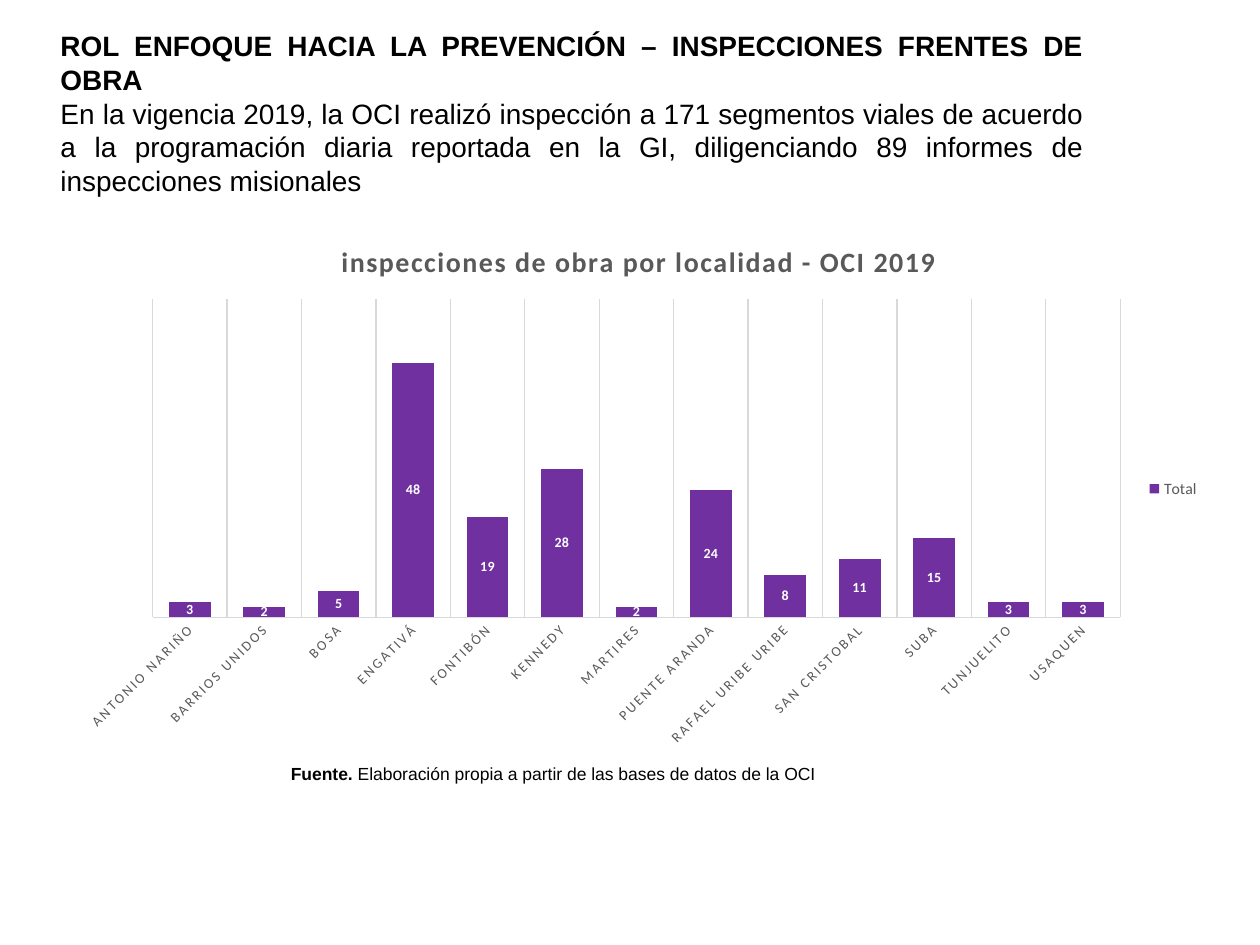
from lxml import etree
from pptx import Presentation
from pptx.chart.data import CategoryChartData
from pptx.dml.color import RGBColor
from pptx.enum.chart import XL_CHART_TYPE, XL_LABEL_POSITION, XL_LEGEND_POSITION, XL_TICK_MARK
from pptx.enum.text import MSO_ANCHOR, MSO_AUTO_SIZE, PP_ALIGN
from pptx.util import Inches, Pt

STACKED = XL_CHART_TYPE.COLUMN_STACKED
CENTER = XL_LABEL_POSITION.CENTER
RIGHT = XL_LEGEND_POSITION.RIGHT
NO_TICK = XL_TICK_MARK.NONE
TOP = MSO_ANCHOR.TOP
GROW = MSO_AUTO_SIZE.SHAPE_TO_FIT_TEXT
LEFT, JUSTIFY = PP_ALIGN.LEFT, PP_ALIGN.JUSTIFY

WIDE, HIGH = Inches(10), Inches(7.5)
COLORS = {"ink": "000000", "gray": "595959", "rule": "D9D9D9",
          "bar": "7030A0", "white": "FFFFFF"}
C_NS = "http://schemas.openxmlformats.org/drawingml/2006/chart"

HEAD = "ROL ENFOQUE HACIA LA PREVENCIÓN – INSPECCIONES FRENTES DE OBRA"
INTRO = ("En la vigencia 2019, la OCI realizó inspección a 171 segmentos viales "
         "de acuerdo a la programación diaria reportada en la GI, diligenciando "
         "89 informes de inspecciones misionales")
SOURCE = "Elaboración propia a partir de las bases de datos de la OCI"
TITLE = "inspecciones de obra por localidad - OCI 2019"
VISITS = {
    "ANTONIO NARIÑO": 3, "BARRIOS UNIDOS": 2, "BOSA": 5, "ENGATIVÁ": 48,
    "FONTIBÓN": 19, "KENNEDY": 28, "MARTIRES": 2, "PUENTE ARANDA": 24,
    "RAFAEL URIBE URIBE": 8, "SAN CRISTOBAL": 11, "SUBA": 15,
    "TUNJUELITO": 3, "USAQUEN": 3,
}


def rgb(name):
    return RGBColor.from_string(COLORS[name])


def area(left, top, width, height):
    """Turn inches into a box of slide lengths."""
    return [Inches(n) for n in (left, top, width, height)]


def style(font, size, color, bold=False, face="Calibri"):
    for key, value in {"size": Pt(size), "bold": bold, "name": face}.items():
        setattr(font, key, value)
    font.color.rgb = rgb(color)


def rule(line):
    line.color.rgb = rgb("rule")
    line.width = Pt(0.75)


def write(shape, box, paras, size, align):
    """Fill a shape with paragraphs, each a list of (text, bold) runs."""
    for key, value in zip(("left", "top", "width", "height"), box):
        setattr(shape, key, value)
    frame = shape.text_frame
    for key, value in {"word_wrap": True, "vertical_anchor": TOP,
                       "auto_size": GROW}.items():
        setattr(frame, key, value)
    for i, runs in enumerate(paras):
        para = frame.add_paragraph() if i else frame.paragraphs[0]
        para.alignment = align
        for text, bold in runs:
            run = para.add_run()
            run.text = text
            style(run.font, size, "ink", bold, "Arial")


def place_plot(chart, shares):
    """Fix the inner plot area as shares of the chart's size."""
    plot = chart.element.xpath(".//c:plotArea")[0]
    for old in plot.xpath("./c:layout"):
        plot.remove(old)
    layout = etree.Element(f"{{{C_NS}}}layout")
    manual = etree.SubElement(layout, f"{{{C_NS}}}manualLayout")
    marks = {"layoutTarget": "inner", "xMode": "edge", "yMode": "edge", **shares}
    for tag, value in marks.items():
        etree.SubElement(manual, f"{{{C_NS}}}{tag}").set("val", str(value))
    plot.insert(0, layout)


def set_axes(chart):
    cat, val = chart.category_axis, chart.value_axis
    cat.major_tick_mark = cat.minor_tick_mark = NO_TICK
    cat.has_major_gridlines = True
    rule(cat.major_gridlines.format.line)
    rule(cat.format.line)
    style(cat.tick_labels.font, 8, "gray")
    val.has_major_gridlines = False
    val.minimum_scale, val.maximum_scale = 0, 60
    val.visible = False
    chart.element.xpath(".//c:catAx/c:txPr/a:bodyPr")[0].set("rot", "-2700000")


def set_bars(chart):
    plot = chart.plots[0]
    plot.gap_width, plot.overlap = 79, 100
    plot.vary_by_categories = False
    bars = plot.series[0]
    bars.format.fill.solid()
    bars.format.fill.fore_color.rgb = rgb("bar")
    labels = bars.data_labels
    labels.show_value = True
    labels.position = CENTER
    style(labels.font, 8, "white", True)


def add_bars(slide, box):
    data = CategoryChartData()
    data.categories = list(VISITS)
    data.add_series("Total", list(VISITS.values()))
    chart = slide.shapes.add_chart(STACKED, *box, data).chart
    style(chart.font, 10, "ink")
    chart.has_title = True
    run = chart.chart_title.text_frame.paragraphs[0].add_run()
    run.text = TITLE
    style(run.font, 16, "gray", True)
    chart.has_legend = True
    chart.legend.position = RIGHT
    chart.legend.include_in_layout = False
    style(chart.legend.font, 9, "gray")
    set_axes(chart)
    set_bars(chart)
    place_plot(chart, {"x": 0.076, "y": 0.146, "w": 0.844, "h": 0.594})
    for path, gap in ((".//c:title//a:rPr", 100), (".//c:catAx//a:defRPr", 120)):
        for props in chart.element.xpath(path):
            props.set("spc", str(gap))


def main():
    deck = Presentation()
    deck.slide_width, deck.slide_height = WIDE, HIGH
    slide = deck.slides.add_slide(deck.slide_layouts[5])
    write(slide.shapes.title, area(0.38, 0.18, 8.32, 1.72),
          [[(HEAD, True)], [(INTRO, False)]], 16, JUSTIFY)
    add_bars(slide, area(0.52, 1.75, 9.1, 4.26))
    box = area(2.21, 6.01, 5.72, 0.27)
    write(slide.shapes.add_textbox(*box), box,
          [[("Fuente. ", True), (SOURCE, False)]], 10, LEFT)
    deck.save("out.pptx")


if __name__ == "__main__":
    main()
